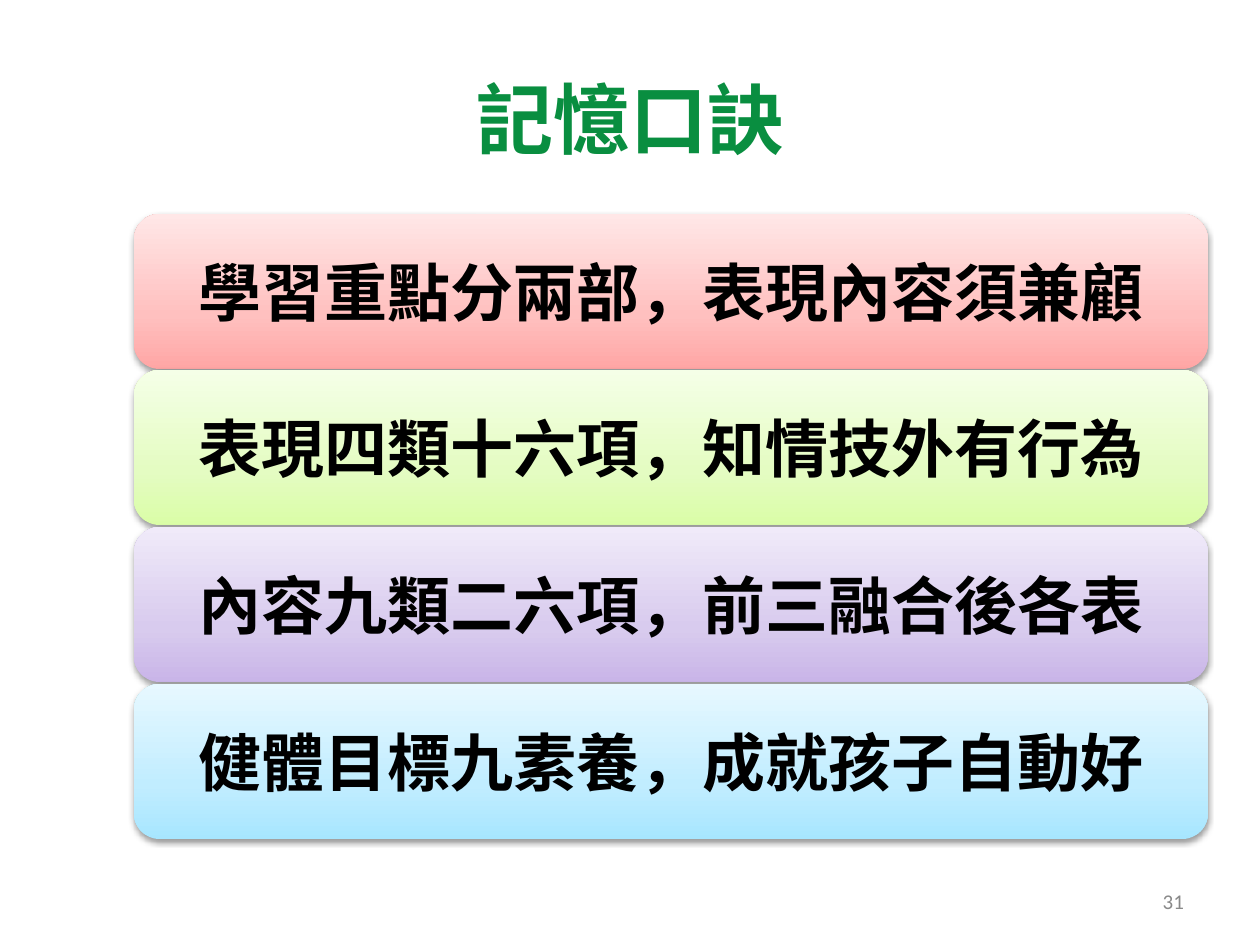
from dataclasses import dataclass

from lxml import etree
from pptx import Presentation
from pptx import util as u
from pptx.dml.color import RGBColor
from pptx.enum import shapes, text
from pptx.oxml import ns, parse_xml

SCALE = 914400 / 126
CJK = "Noto Sans CJK SC"
COLORS = {"title": "098E40", "verse": "000000", "number": "898989", "shadow": "000000"}
VERSE_LEFT, VERSE_TOP, VERSE_WIDTH, VERSE_HEIGHT = 134, 214, 1074, 155
FOUR_VERSES_SPAN = 470


@dataclass
class Verse:
    words: str
    gradient: tuple[str, str, str]


VERSES = [
    Verse("學習重點分兩部，表現內容須兼顧", ("FFA6A5", "FFC0BF", "FFE7E7")),
    Verse("表現四類十六項，知情技外有行為", ("DAFDA7", "E4FCC2", "F5FFE7")),
    Verse("內容九類二六項，前三融合後各表", ("C9B5E8", "D8CBEE", "F0EAF9")),
    Verse("健體目標九素養，成就孩子自動好", ("A7E6FF", "C1EDFF", "E7F8FF")),
]


def px(length: int) -> u.Emu:
    return u.Emu(round(length * SCALE))


def place(*lengths: int) -> list[u.Emu]:
    return [px(length) for length in lengths]


def write(frame, words: str, *, size: int, color: str, font: str = CJK,
          bold: bool = False, align=text.PP_ALIGN.CENTER,
          inset: tuple[int, int] = (13, 6), spacing: float | None = None) -> None:
    frame.word_wrap = True
    frame.auto_size = text.MSO_AUTO_SIZE.NONE
    frame.vertical_anchor = text.MSO_ANCHOR.MIDDLE
    frame.margin_left = frame.margin_right = px(inset[0])
    frame.margin_top = frame.margin_bottom = px(inset[1])
    paragraph = frame.paragraphs[0]
    paragraph.alignment = align
    paragraph.line_spacing = spacing
    run = paragraph.add_run()
    run.text = words
    run.font.size = u.Pt(size)
    run.font.bold = bold
    run.font.name = font
    run.font.color.rgb = RGBColor.from_string(color)
    east_asian = etree.Element(ns.qn("a:ea"), typeface=font)
    run.font._element.find(ns.qn("a:latin")).addnext(east_asian)


def fill_gradient(shape, colors: tuple[str, str, str]) -> None:
    shape.fill.gradient()
    stops = "".join(
        f'<a:gs pos="{position}"><a:srgbClr val="{color}"/></a:gs>'
        for position, color in zip((0, 35000, 100000), colors)
    )
    gradient = parse_xml(
        f'<a:gradFill {ns.nsdecls("a")} rotWithShape="1"><a:gsLst>{stops}</a:gsLst>'
        '<a:lin ang="16200000" scaled="0"/></a:gradFill>'
    )
    properties = shape._element.spPr
    properties.replace(properties.find(ns.qn("a:gradFill")), gradient)


def cast_shadow(shape) -> None:
    shape.shadow.inherit = False
    shape._element.spPr.find(ns.qn("a:effectLst")).append(parse_xml(
        f'<a:outerShdw {ns.nsdecls("a")} blurRad="40000" dist="20000" dir="5400000" '
        f'rotWithShape="0"><a:srgbClr val="{COLORS["shadow"]}">'
        '<a:alpha val="38000"/></a:srgbClr></a:outerShdw>'
    ))


def draw_verse(slide, verse: Verse, top: int) -> None:
    card = slide.shapes.add_shape(
        shapes.MSO_SHAPE.ROUNDED_RECTANGLE,
        *place(VERSE_LEFT, top, VERSE_WIDTH, VERSE_HEIGHT),
    )
    fill_gradient(card, verse.gradient)
    card.line.fill.background()
    cast_shadow(card)
    write(card.text_frame, verse.words, size=36, color=COLORS["verse"],
          bold=True, inset=(19, 19))


def main() -> None:
    deck = Presentation()
    deck.slide_width, deck.slide_height = place(1260, 945)
    slide = deck.slides.add_slide(deck.slide_layouts[5])

    title = slide.shapes.title
    title.left, title.top, title.width, title.height = place(64, 45, 1134, 158)
    write(title.text_frame, "記憶口訣", size=44, color=COLORS["title"],
          bold=True, spacing=0.9)

    for index, verse in enumerate(VERSES):
        draw_verse(slide, verse, VERSE_TOP + index * FOUR_VERSES_SPAN // 3)

    page_number = slide.shapes.add_textbox(*place(903, 876, 294, 50))
    write(page_number.text_frame, "31", size=12, color=COLORS["number"],
          font="Calibri", align=text.PP_ALIGN.RIGHT)

    deck.save("out.pptx")


if __name__ == "__main__":
    main()
